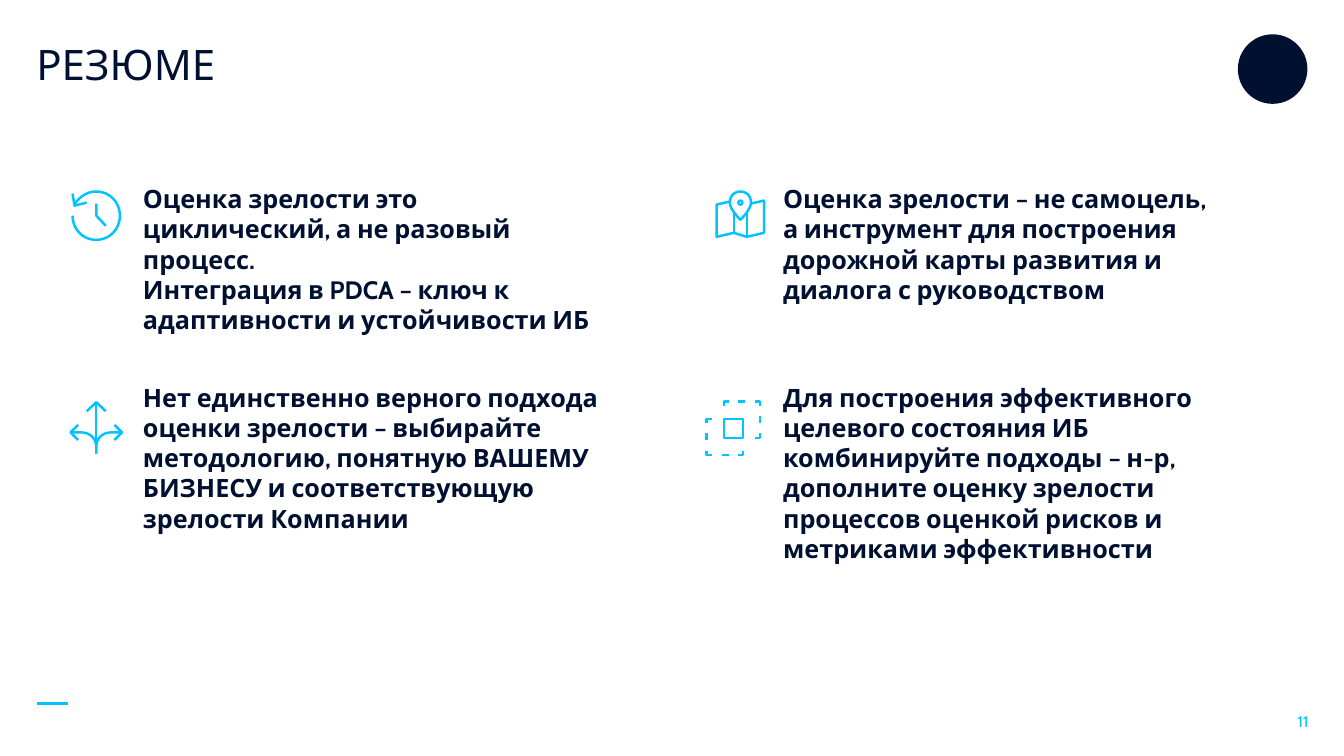
"""Build the summary slide: four conclusions, each with a line icon."""
from dataclasses import dataclass

from pptx import Presentation
from pptx.dml.color import RGBColor
from pptx.enum.shapes import MSO_CONNECTOR, MSO_SHAPE
from pptx.enum.text import MSO_ANCHOR, PP_ALIGN
from pptx.oxml.ns import qn
from pptx.util import Inches, Pt
from lxml import etree

STRAIGHT = MSO_CONNECTOR.STRAIGHT
RECTANGLE, ELLIPSE = MSO_SHAPE.RECTANGLE, MSO_SHAPE.OVAL
TOP = MSO_ANCHOR.TOP
LEFT, RIGHT = PP_ALIGN.LEFT, PP_ALIGN.RIGHT
CELL = Inches(0.1)
COLUMNS, ROWS = 133.33, 75
NAVY, CYAN = "001031", "00C3FF"
FONT = "Cabin"
CURVE_STEPS = 12
TEXT_COLUMNS, TEXT_ROWS = (13.2, 76.7), (17.7, 37.4)


@dataclass(frozen=True)
class Stroke:
    """Start point, then line ends (x, y) or curves (two controls and an end)."""
    points: tuple
    closed: bool = False


@dataclass(frozen=True)
class Preset:
    """Outlined preset shape, placed by its centre."""
    kind: int
    centre: tuple
    size: float


@dataclass(frozen=True)
class Card:
    """Conclusion at a place in the two-by-two grid, with its icon."""
    column: int
    row: int
    width: float
    height: float
    paragraphs: tuple
    icon_centre: tuple
    icon: tuple


HISTORY = (
    Stroke(((0, -1.2), (0, 0), (0.95, 1))),
    Stroke(((-2.35, 0), (-2.35, 1.3, -1.35, 2.4, 0, 2.4), (1.35, 2.4, 2.35, 1.3, 2.35, 0),
            (2.35, -1.3, 1.35, -2.4, 0, -2.4), (-0.95, -2.4, -1.75, -1.8, -2.15, -1.1))),
    Stroke(((-2.35, -2.2), (-2.15, -1), (-0.95, -1.3))),
)
MAP = (
    Stroke(((-0.65, 1.85), (-0.65, -0.15))),
    Stroke(((0.65, 2.25), (0.65, -0.15))),
    Stroke(((1.05, -1.05), (2.35, -1.35), (2.35, 1.85), (0.65, 2.25), (-0.65, 1.85),
            (-2.35, 2.25), (-2.35, -0.95), (-1.05, -1.25))),
    Stroke(((1.05, -1.15), (1.05, -0.45, 0, 0.55, 0, 0.55), (0, 0.55, -1.05, -0.45, -1.05, -1.15),
            (-1.05, -1.85, -0.55, -2.25, 0, -2.25), (0.55, -2.25, 1.05, -1.85, 1.05, -1.15)), True),
    Preset(ELLIPSE, (0, -1.15), 0.4),
)
DIRECTIONS = (
    Stroke(((0, 1.4), (0, -3))),
    Stroke(((-0.95, -2.1), (0, -3), (0.95, -2.1))),
    *(stroke for side in (-1, 1) for stroke in (
        Stroke(((2.55 * side, 0), (1.45 * side, 0), (0.65 * side, 0, 0, 0.6, 0, 1.4), (0, 2.1))),
        Stroke(((1.8 * side, 0.75), (2.55 * side, 0), (1.8 * side, -0.75))),
    )),
)
HALF_FRAME = (
    ((-0.45, -2.65), (-0.95, -2.65), (-0.95, -2.2)),
    ((0.45, -2.65), (1.15, -2.65)),
    ((2.15, -2.65), (2.65, -2.65), (2.65, -2.2)),
    ((2.65, -1.2), (2.65, -0.5)),
    ((2.65, 0.5), (2.65, 0.95), (2.15, 0.95)),
)
COMBINATION = (
    *(Stroke(tuple((x * side, y * side) for x, y in points))
      for side in (1, -1) for points in HALF_FRAME),
    Preset(RECTANGLE, (0, 0), 1.9),
)
CARDS = (
    Card(0, 0, 46.5, 13.1, (
        "Оценка зрелости это циклический, а не разовый процесс.",
        "Интеграция в PDCA – ключ к адаптивности и устойчивости ИБ",
    ), (9.55, 21.4), HISTORY),
    Card(0, 1, 50, 16.2, (
        "Нет единственно верного подхода оценки зрелости – выбирайте методологию, "
        "понятную ВАШЕМУ БИЗНЕСУ и соответствующую зрелости Компании",
    ), (9.55, 42.9), DIRECTIONS),
    Card(1, 1, 50.9, 16.2, (
        "Для построения эффективного целевого состояния ИБ комбинируйте подходы – н-р, "
        "дополните оценку зрелости процессов оценкой рисков и метриками эффективности",
    ), (72.75, 42.5), COMBINATION),
    Card(1, 0, 49.1, 13.1, (
        "Оценка зрелости – не самоцель,",
        "а инструмент для построения дорожной карты развития и",
        "диалога с руководством",
    ), (73.45, 21.25), MAP),
)


def cells(*lengths: float) -> list[int]:
    """Turn grid lengths into slide units."""
    return [round(length * CELL) for length in lengths]


def colour(code: str) -> RGBColor:
    """Turn a hex string into a colour."""
    return RGBColor.from_string(code)


def write(shape, paragraphs: tuple, alignment: int = LEFT, code: str = NAVY, **formats) -> None:
    """Fill a shape with formatted paragraphs."""
    frame = shape.text_frame
    frame.word_wrap = True
    frame.vertical_anchor = TOP
    frame.text = "\n".join(paragraphs)
    for paragraph in frame.paragraphs:
        paragraph.alignment = alignment
        for name, value in {"name": FONT, **formats}.items():
            setattr(paragraph.font, name, value)
        paragraph.font.color.rgb = colour(code)


def outline(shape, width: float = 1.75) -> None:
    """Give a shape or connector a plain cyan line."""
    shape.line.color.rgb = colour(CYAN)
    shape.line.width = Pt(width)


def draw_line(shapes, start: tuple, end: tuple, width: float = 1.75) -> None:
    """Draw a straight connector between two grid points."""
    connector = shapes.add_connector(STRAIGHT, *cells(*start, *end))
    outline(connector, width)
    etree.SubElement(connector._element.spPr, qn("a:effectLst"))


def trace(points: tuple) -> list[tuple]:
    """Replace each curve by short straight steps."""
    traced = [points[0]]
    for point in points[1:]:
        if len(point) == 2:
            traced.append(point)
            continue
        knots = [traced[-1], point[:2], point[2:4], point[4:]]
        for step in range(1, CURVE_STEPS + 1):
            t = step / CURVE_STEPS
            weights = ((1 - t) ** 3, 3 * t * (1 - t) ** 2, 3 * t * t * (1 - t), t ** 3)
            traced.append(tuple(sum(weight * knot[axis] for weight, knot in zip(weights, knots))
                                for axis in (0, 1)))
    return traced


def draw_mark(shapes, mark: Stroke | Preset, centre: tuple) -> None:
    """Draw one part of an icon around the icon's centre."""
    if isinstance(mark, Preset):
        left, top = (middle + shift - mark.size / 2 for middle, shift in zip(centre, mark.centre))
        shape = shapes.add_shape(mark.kind, *cells(left, top, mark.size, mark.size))
    else:
        places = [(centre[0] + x, centre[1] + y) for x, y in trace(mark.points)]
        if len(places) == 2:
            draw_line(shapes, *places)
            return
        builder = shapes.build_freeform(*cells(*places[0]))
        builder.add_line_segments([cells(*place) for place in places[1:]], close=mark.closed)
        shape = builder.convert_to_shape()
    shape.fill.background()
    shape.shadow.inherit = False
    outline(shape)


def draw_card(slide, card: Card) -> None:
    """Draw a conclusion and its icon as one group."""
    shapes = slide.shapes.add_group_shape().shapes
    text = shapes.add_textbox(*cells(TEXT_COLUMNS[card.column], TEXT_ROWS[card.row],
                                     card.width, card.height))
    write(text, card.paragraphs, size=Pt(18), bold=True)
    for mark in card.icon:
        draw_mark(shapes, mark, card.icon_centre)


def main() -> None:
    """Build and save the presentation."""
    presentation = Presentation()
    presentation.slide_width, presentation.slide_height = cells(COLUMNS, ROWS)
    slide = presentation.slides.add_slide(presentation.slide_layouts[5])
    title = slide.shapes.title
    title.left, title.top, title.width, title.height = cells(2.6, 3.3, 112.3, 10.5)
    write(title, ("РЕЗЮМЕ",), size=Pt(30))
    emblem = slide.shapes.add_shape(ELLIPSE, *cells(122.8, 3.4, 6.9, 6.9))
    emblem.fill.solid()
    emblem.fill.fore_color.rgb = colour(NAVY)
    emblem.line.fill.background()
    emblem.shadow.inherit = False
    draw_line(slide.shapes, (3.7, 69.8), (6.7, 69.8), 2.25)
    page_number = slide.shapes.add_textbox(*cells(126.7, 70.2, 4.1, 2.9))
    write(page_number, ("11",), RIGHT, CYAN, size=Pt(11))
    for card in CARDS:
        draw_card(slide, card)
    presentation.save("out.pptx")


if __name__ == "__main__":
    main()
